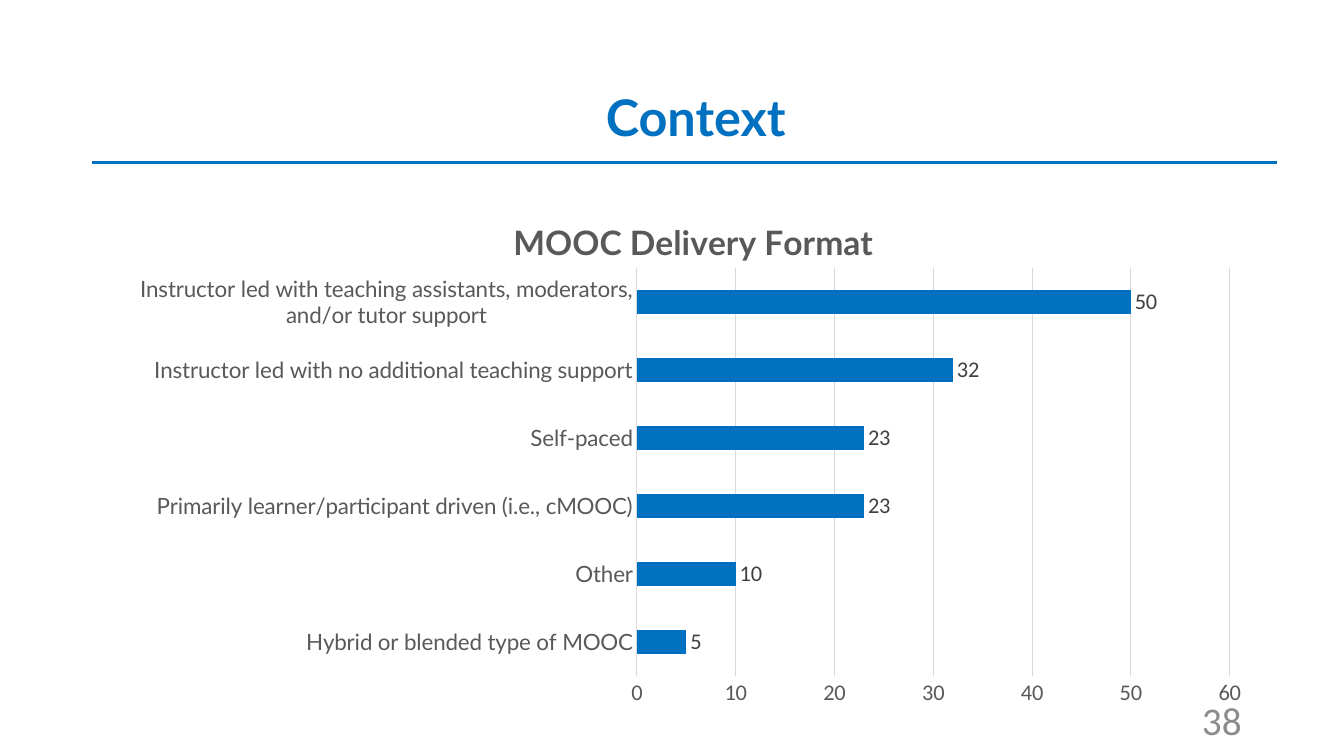
import pptx
import pptx.util
import pptx.dml.color
import pptx.chart.data
import pptx.enum.chart
import pptx.enum.shapes
import pptx.enum.text
import pptx.oxml
import pptx.oxml.ns

Pt = pptx.util.Pt
RGBColor = pptx.dml.color.RGBColor
ALIGN = pptx.enum.text.PP_ALIGN
TICK = pptx.enum.chart.XL_TICK_MARK

BLUE = RGBColor(0x00, 0x70, 0xC0)
DARK = RGBColor(0x40, 0x40, 0x40)
GREY = RGBColor(0x59, 0x59, 0x59)
PALE = RGBColor(0x8C, 0x8C, 0x8C)
RULE = RGBColor(0xD9, 0xD9, 0xD9)

FORMATS = {
    "Hybrid or blended type of MOOC": 5,
    "Other": 10,
    "Primarily learner/participant driven (i.e., cMOOC)": 23,
    "Self-paced": 23,
    "Instructor led with no additional teaching support": 32,
    "Instructor led with teaching assistants, moderators, and/or tutor support": 50,
}


def style(font, size, color, name="Calibri", bold=False):
    font.size, font.name, font.bold = Pt(size), name, bold
    font.color.rgb = color


def add_text(slide, text, left, top, width, height, align, **look):
    box = slide.shapes.add_textbox(Pt(left), Pt(top), Pt(width), Pt(height))
    frame = box.text_frame
    frame.word_wrap = True
    frame.vertical_anchor = pptx.enum.text.MSO_ANCHOR.MIDDLE
    para = frame.paragraphs[0]
    para.alignment = align
    run = para.add_run()
    run.text = text
    style(run.font, **look)


def add_rule(slide, left, right, top):
    line = slide.shapes.add_connector(
        pptx.enum.shapes.MSO_CONNECTOR.STRAIGHT,
        Pt(left), Pt(top), Pt(right), Pt(top))
    line.line.color.rgb = BLUE
    line.line.width = Pt(2)
    line._element.spPr.append(pptx.oxml.parse_xml(
        f'<a:effectLst {pptx.oxml.ns.nsdecls("a")}/>'))


def make_layout(inner=False, **box):
    """Return a manual layout; x, y, w and h are fractions of the chart."""
    target = '<c:layoutTarget val="inner"/>' if inner else ""
    modes = "".join(f'<c:{key}Mode val="edge"/>' for key in "xy")
    sizes = "".join(f'<c:{key} val="{val}"/>' for key, val in box.items())
    return pptx.oxml.parse_xml(
        f'<c:layout {pptx.oxml.ns.nsdecls("c")}><c:manualLayout>'
        f'{target}{modes}{sizes}</c:manualLayout></c:layout>')


def set_layout(parent, layout, index):
    for old in parent.findall(pptx.oxml.ns.qn("c:layout")):
        parent.remove(old)
    parent.insert(index, layout)


def style_axis(axis, font):
    axis.major_tick_mark = axis.minor_tick_mark = TICK.NONE
    style(axis.tick_labels.font, 16, GREY, font)


def set_line(line):
    line.color.rgb = RULE
    line.width = Pt(0.75)


def add_bars(slide, title, left, top, width, height):
    data = pptx.chart.data.CategoryChartData(number_format="0")
    data.categories = list(FORMATS)
    data.add_series("Series 1", list(FORMATS.values()))
    chart = slide.shapes.add_chart(
        pptx.enum.chart.XL_CHART_TYPE.BAR_CLUSTERED,
        Pt(left), Pt(top), Pt(width), Pt(height), data).chart
    chart.has_legend = False
    chart.font.name = "Calibri"
    chart.font.size = Pt(10)

    chart.has_title = True
    head = chart.chart_title
    run = head.text_frame.paragraphs[0].add_run()
    run.text = title
    style(run.font, 24, GREY, "Lato", True)
    head.include_in_layout = False
    set_layout(head._element, make_layout(x=0.34, y=0.04), 1)

    style_axis(chart.category_axis, "Lato")
    set_line(chart.category_axis.format.line)
    scale = chart.value_axis
    style_axis(scale, "Calibri")
    scale.format.line.fill.background()
    scale.minimum_scale, scale.maximum_scale, scale.major_unit = 0, 60, 10
    set_line(scale.major_gridlines.format.line)

    plot = chart.plots[0]
    plot.gap_width = 182
    plot.vary_by_categories = False
    fill = plot.series[0].format.fill
    fill.solid()
    fill.fore_color.rgb = BLUE
    plot.has_data_labels = True
    labels = plot.data_labels
    labels.show_value = True
    labels.position = pptx.enum.chart.XL_LABEL_POSITION.OUTSIDE_END
    style(labels.font, 16, DARK)
    area = chart._chartSpace.chart.plotArea
    set_layout(area, make_layout(True, x=0.453, y=0.147, w=0.517, h=0.773), 0)


def main():
    deck = pptx.Presentation()
    deck.slide_width, deck.slide_height = Pt(960), Pt(540)
    slide = deck.slides.add_slide(deck.slide_layouts[6])
    add_text(slide, "Context", 50, 31, 894, 104, ALIGN.CENTER,
             size=36, color=BLUE, name="Lato", bold=True)
    add_rule(slide, 66, 912, 116)
    add_text(slide, "38", 678, 500, 216, 29, ALIGN.RIGHT, size=28, color=PALE)
    add_bars(slide, "MOOC Delivery Format", 84, 136, 819, 377)
    deck.save("out.pptx")


if __name__ == "__main__":
    main()
